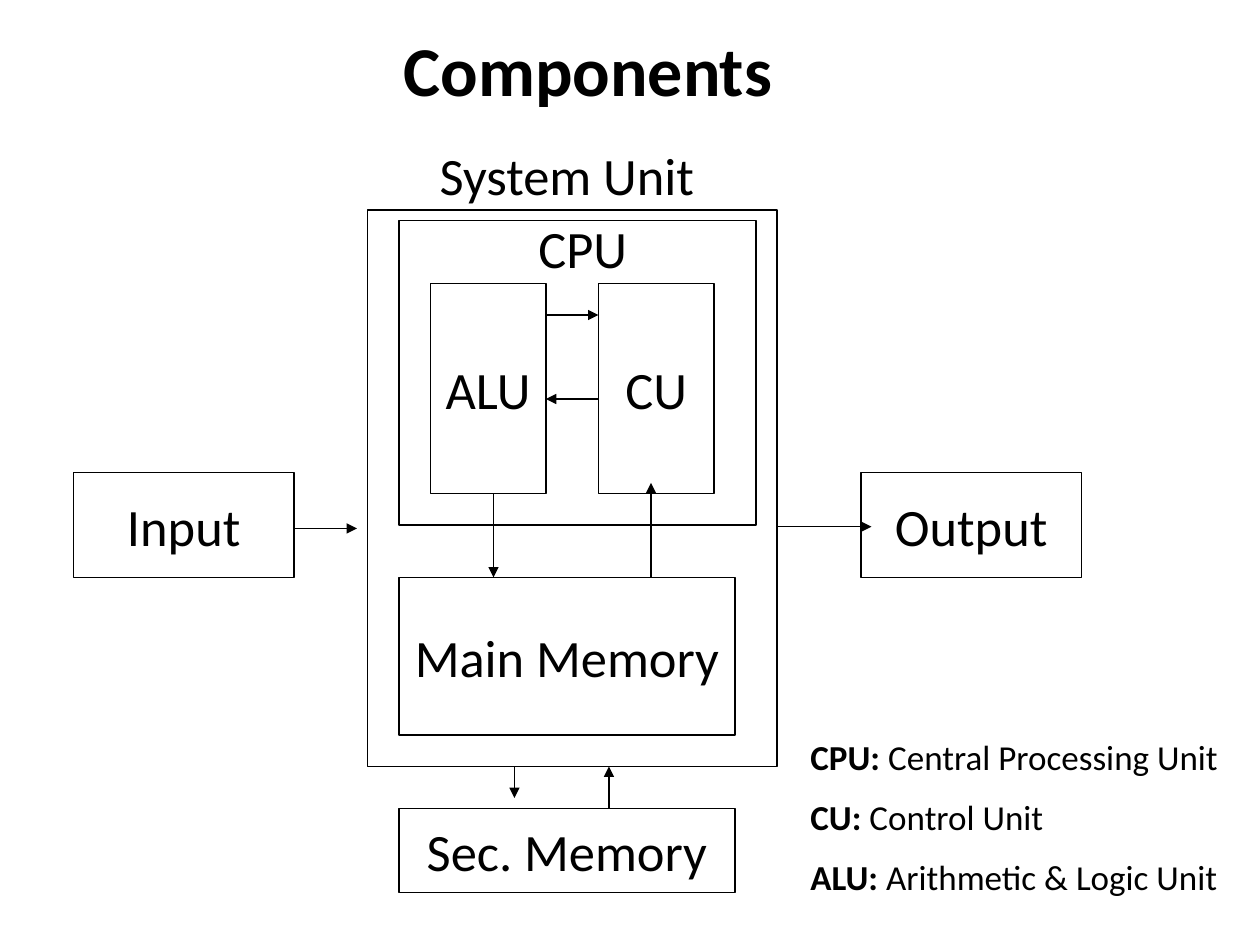
from lxml.etree import SubElement
from pptx import Presentation
from pptx.dml.color import RGBColor
from pptx.enum.shapes import MSO_CONNECTOR, MSO_SHAPE
from pptx.enum.text import MSO_ANCHOR, PP_ALIGN
from pptx.oxml.ns import qn
from pptx.util import Pt

BLACK = RGBColor(0, 0, 0)
FONT = "Calibri"
LABEL_SIZE = 30

TITLE = ("Components", 12, -6, 648, 90)
BOXES = [
    ("", 210, 120, 234, 318),
    ("Input", 42, 270, 126, 60),
    ("Output", 492, 270, 126, 60),
    ("", 228, 126, 204, 174),
    ("Main Memory", 228, 330, 192, 90),
    ("ALU", 246, 162, 66, 120),
    ("CU", 342, 162, 66, 120),
    ("Sec. Memory", 228, 462, 192, 48),
]
ARROWS = [
    (168, 302, 204, 302),
    (312, 180, 342, 180),
    (342, 228, 312, 228),
    (282, 282, 282, 330),
    (372, 330, 372, 276),
    (294, 438, 294, 456),
    (348, 462, 348, 438),
    (444, 301, 498, 301),
]
CAPTIONS = [
    ("CPU", 246, 120, 174, 44),
    ("System Unit", 216, 78, 216, 44),
]
LEGEND_PLACE = (456, 417, 264, 123)
LEGEND = [
    ("CPU: ", "Central Processing Unit"),
    ("CU: ", "Control Unit"),
    ("ALU: ", "Arithmetic & Logic Unit"),
]


def points(values):
    return [Pt(value) for value in values]


def style(paragraph, size, bold=None, alignment=PP_ALIGN.CENTER):
    paragraph.alignment = alignment
    font = paragraph.font
    font.name, font.size, font.bold = FONT, Pt(size), bold
    font.color.rgb = BLACK


def write_label(shape, text, size=LABEL_SIZE, bold=None):
    shape.text_frame.text = text
    style(shape.text_frame.paragraphs[0], size, bold)


def set_line(line):
    line.color.rgb = BLACK
    line.width = Pt(0.75)


def add_box(slide, text, *place):
    shape = slide.shapes.add_shape(MSO_SHAPE.RECTANGLE, *points(place))
    shape.shadow.inherit = False
    shape.fill.background()
    set_line(shape.line)
    if text:
        shape.text_frame.word_wrap = False
        shape.text_frame.vertical_anchor = MSO_ANCHOR.MIDDLE
        write_label(shape, text)


def add_arrow(slide, *ends):
    connector = slide.shapes.add_connector(MSO_CONNECTOR.STRAIGHT, *points(ends))
    set_line(connector.line)
    SubElement(connector.line._get_or_add_ln(), qn("a:tailEnd"), type="triangle")
    SubElement(connector._element.spPr, qn("a:effectLst"))


def add_text_box(slide, place):
    box = slide.shapes.add_textbox(*points(place))
    box.text_frame.word_wrap = True
    return box


def add_legend(slide):
    frame = add_text_box(slide, LEGEND_PLACE).text_frame
    for index, (term, meaning) in enumerate(LEGEND):
        paragraph = frame.add_paragraph() if index else frame.paragraphs[0]
        style(paragraph, 20, alignment=PP_ALIGN.LEFT)
        if index:
            paragraph.space_before = Pt(10)
        run = paragraph.add_run()
        run.text = term
        run.font.bold = True
        paragraph.add_run().text = meaning


def main():
    presentation = Presentation()
    presentation.slide_width, presentation.slide_height = Pt(720), Pt(540)
    slide = presentation.slides.add_slide(presentation.slide_layouts[5])

    for box in BOXES:
        add_box(slide, *box)
    for arrow in ARROWS:
        add_arrow(slide, *arrow)
    for text, *place in CAPTIONS:
        write_label(add_text_box(slide, place), text)
    add_legend(slide)

    text, *place = TITLE
    title = slide.shapes.title
    title.left, title.top, title.width, title.height = points(place)
    title.text_frame.vertical_anchor = MSO_ANCHOR.MIDDLE
    write_label(title, text, 40, True)

    presentation.save("out.pptx")


if __name__ == "__main__":
    main()
